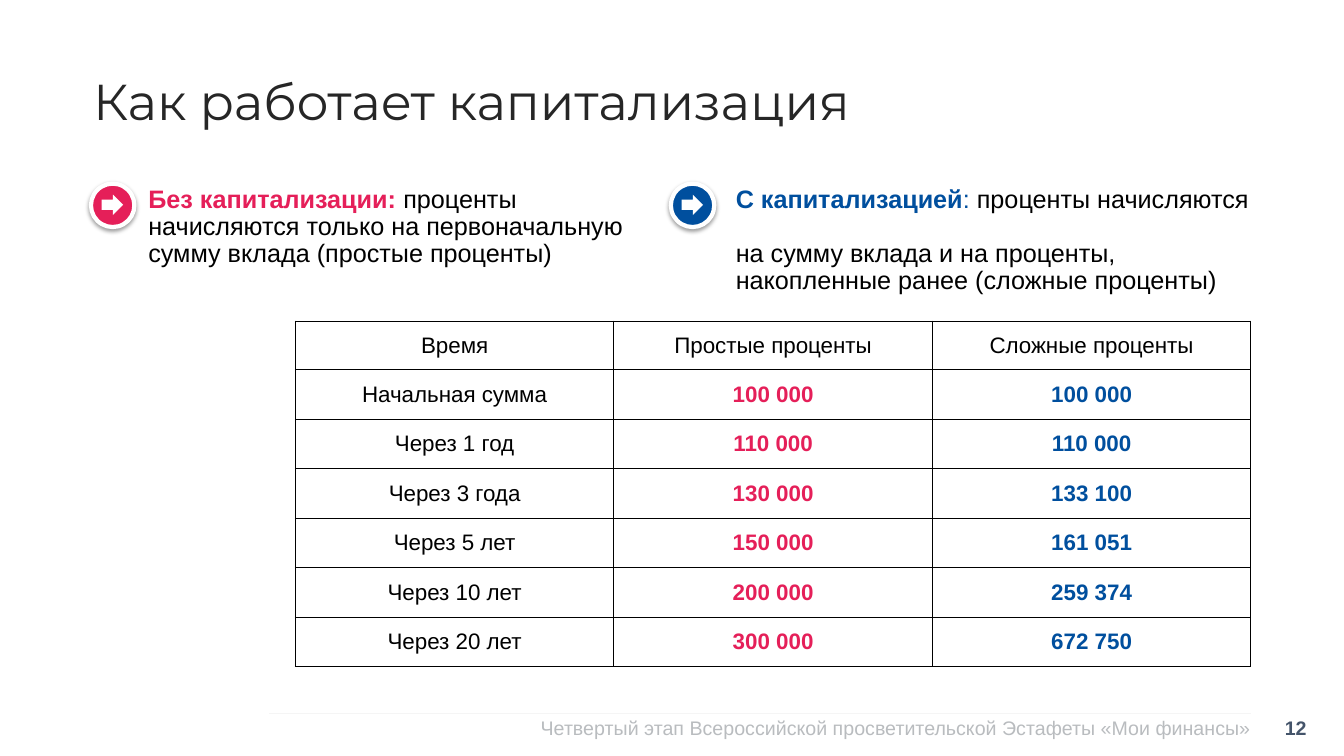
from lxml.etree import SubElement
from pptx import Presentation
from pptx.dml.color import RGBColor
from pptx.enum.shapes import MSO_CONNECTOR, MSO_SHAPE
from pptx.enum.text import MSO_ANCHOR, PP_ALIGN
from pptx.oxml import parse_xml
from pptx.oxml.ns import nsdecls, qn
from pptx.util import Pt

# Theme: colours and type sizes
THEME = {
    "pink": RGBColor.from_string("E51F59"),
    "blue": RGBColor.from_string("004F9E"),
    "black": RGBColor.from_string("000000"),
    "white": RGBColor.from_string("FFFFFF"),
    "heading": RGBColor.from_string("262626"),
    "footer": RGBColor.from_string("B9BCBF"),
    "number": RGBColor.from_string("44546A"),
    "rule": RGBColor.from_string("F5F5F5"),
    "title_size": Pt(36),
    "body_size": Pt(18),
    "table_size": Pt(16),
    "footer_size": Pt(14),
}


def add_run(p, text, color, size, bold=False, name="Arial"):
    r = p.add_run()
    r.text = text
    for key, value in {"size": size, "bold": bold, "name": name}.items():
        setattr(r.font, key, value)
    r.font.color.rgb = THEME[color]


def add_text(s, box, align=PP_ALIGN.LEFT, spacing=None):
    tf = s.shapes.add_textbox(*map(Pt, box)).text_frame
    layout = {"word_wrap": True, "vertical_anchor": MSO_ANCHOR.TOP, "margin_left": 0,
              "margin_top": 0, "margin_right": 0, "margin_bottom": 0}
    for key, value in layout.items():
        setattr(tf, key, value)
    p = tf.paragraphs[0]
    p.alignment = align
    p.line_spacing = spacing
    return p


prs = Presentation()
prs.slide_width, prs.slide_height = Pt(960), Pt(540)
s = prs.slides.add_slide(prs.slide_layouts[6])

# Footer: rule, event name, page number
rule = s.shapes.add_connector(MSO_CONNECTOR.STRAIGHT, Pt(192.5), Pt(509.5), Pt(893.5), Pt(509.5))
rule.line.color.rgb = THEME["rule"]
rule.line.width = Pt(1)
SubElement(rule._element.spPr, qn("a:effectLst"))

p = add_text(s, (365.5, 511.3, 528, 32), PP_ALIGN.RIGHT)
add_run(p, "Четвертый этап Всероссийской просветительской Эстафеты «Мои финансы»",
        "footer", THEME["footer_size"])
p = add_text(s, (893.5, 511.3, 39.8, 29), PP_ALIGN.RIGHT)
add_run(p, "12", "number", THEME["footer_size"], bold=True)

# Title
p = add_text(s, (66.5, 54.8, 610.5, 51), spacing=0.9)
add_run(p, "Как работает капитализация", "heading", THEME["title_size"], name="Montserrat")

# Two definitions; each run is text, colour, bold, and None is a line break
definitions = [
    ("pink", 65, (106, 133.2, 343.5, 59), [
        ("Без капитализации: ", "pink", True),
        ("проценты начисляются только на первоначальную сумму вклада (простые проценты)",
         "black", False),
    ]),
    ("blue", 479.2, (525.6, 133.2, 369.4, 59), [
        ("С капитализацией", "blue", True),
        (": ", "blue", False),
        ("проценты начисляются ", "black", False),
        None,
        ("на сумму вклада и на проценты, накопленные ранее (сложные проценты)", "black", False),
    ]),
]
for color, left, box, runs in definitions:
    p = add_text(s, box, spacing=0.9)
    for run in runs:
        if run is None:
            p.add_line_break()
        else:
            text, run_color, bold = run
            add_run(p, text, run_color, THEME["body_size"], bold)

    # Round arrow badge
    badge = s.shapes.add_group_shape().shapes
    disc = badge.add_shape(MSO_SHAPE.OVAL, Pt(left), Pt(131.2), Pt(31), Pt(31))
    arrow = badge.add_shape(MSO_SHAPE.RIGHT_ARROW, Pt(left + 7.6), Pt(139), Pt(15.4), Pt(14.6))
    for sp, fill in ((disc, color), (arrow, "white")):
        sp.shadow.inherit = False
        sp.fill.solid()
        sp.fill.fore_color.rgb = THEME[fill]
    arrow.line.fill.background()
    disc.line.color.rgb = THEME["white"]
    disc.line.width = Pt(3)
    disc._element.spPr.find(qn("a:effectLst")).append(parse_xml(
        f'<a:outerShdw {nsdecls("a")} blurRad="{Pt(3.1)}" dist="{Pt(1.6)}" dir="5400000" '
        f'algn="t" rotWithShape="0"><a:srgbClr val="{THEME["black"]}">'
        '<a:alpha val="38000"/></a:srgbClr></a:outerShdw>'))

# Comparison table
rows = [
    ("Время", "Простые проценты", "Сложные проценты"),
    ("Начальная сумма", "100 000", "100 000"),
    ("Через 1 год", "110 000", "110 000"),
    ("Через 3 года", "130 000", "133 100"),
    ("Через 5 лет", "150 000", "161 051"),
    ("Через 10 лет", "200 000", "259 374"),
    ("Через 20 лет", "300 000", "672 750"),
]
table = s.shapes.add_table(len(rows), 3, Pt(211), Pt(229.5), Pt(682.5), Pt(247)).table
table.first_row = table.horz_banding = False
for column in table.columns:
    column.width = Pt(227.5)
for i, values in enumerate(rows):
    table.rows[i].height = Pt(35.4 if i else 34.6)
    for j, value in enumerate(values):
        cell = table.cell(i, j)
        cell_format = {"vertical_anchor": MSO_ANCHOR.MIDDLE, "margin_left": 0,
                       "margin_top": 0, "margin_right": 0, "margin_bottom": 0}
        for key, setting in cell_format.items():
            setattr(cell, key, setting)
        p = cell.text_frame.paragraphs[0]
        p.alignment = PP_ALIGN.CENTER
        color = ("black", "pink", "blue")[j] if i else "black"
        add_run(p, value, color, THEME["table_size"], bold=color != "black")
        # Borders go before the fill in the cell properties
        for side in ("lnL", "lnR", "lnT", "lnB"):
            cell._tc.get_or_add_tcPr().append(parse_xml(
                f'<a:{side} {nsdecls("a")} w="{Pt(1)}"><a:solidFill>'
                f'<a:srgbClr val="{THEME["black"]}"/></a:solidFill></a:{side}>'))
        cell.fill.background()

prs.save("out.pptx")
